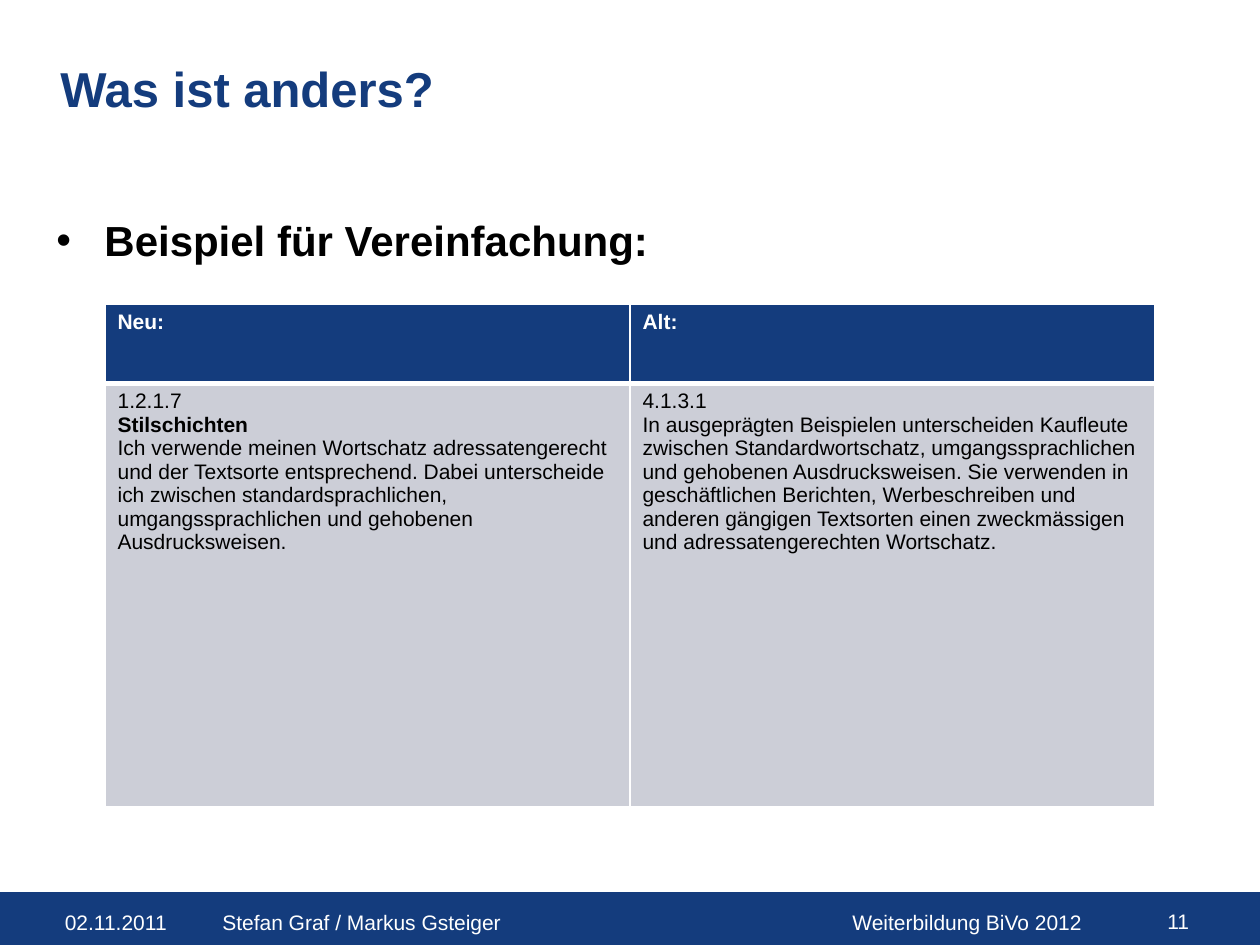
from dataclasses import dataclass

from lxml import etree
from pptx import Presentation
from pptx.dml.color import RGBColor
from pptx.enum.shapes import MSO_SHAPE
from pptx.enum.text import MSO_ANCHOR, PP_ALIGN
from pptx.oxml.ns import qn
from pptx.util import Pt

RECT = MSO_SHAPE.RECTANGLE
TOP = MSO_ANCHOR.TOP
LEFT, RIGHT = PP_ALIGN.LEFT, PP_ALIGN.RIGHT


@dataclass(frozen=True)
class Theme:
    font: str = "Arial"
    navy: str = "143C7D"
    gray: str = "CCCED7"
    white: str = "FFFFFF"
    black: str = "000000"
    small: float = 12
    large: float = 24
    title: float = 28
    thin: float = 1
    thick: float = 3


@dataclass(frozen=True)
class Label:
    text: str
    left: float
    top: float
    width: float
    height: float
    size: float
    color: str
    bold: bool = False
    align: PP_ALIGN = LEFT
    inset: float = 3.6
    indent: float = 0


@dataclass(frozen=True)
class Line:
    text: str
    bold: bool = False


THEME = Theme()
BAR_TOP = 510

TITLE = Label("Was ist anders?", 27.4, 27.4, 525.6, 67,
              THEME.title, THEME.navy, bold=True, inset=6)
POINT = Label("Beispiel für Vereinfachung:", 25.2, 116.6, 656, 363,
              THEME.large, THEME.black, bold=True, inset=6, indent=27.4)


def foot(text: str, left: float, width: float, top: float = 516.2,
         align: PP_ALIGN = LEFT) -> Label:
    return Label(text, left, top, width, 23, THEME.small, THEME.white,
                 align=align)


FEET = [
    foot("02.11.2011", 30, 78),
    foot("Weiterbildung BiVo 2012", 480, 168),
    foot("11", 648, 38.6, top=515.5, align=RIGHT),
    foot("Stefan Graf / Markus Gsteiger", 120, 297),
]

HEADS = [[Line("Neu:", True)], [Line("Alt:", True)]]
TEXTS = [
    [
        Line("1.2.1.7"),
        Line("Stilschichten", True),
        Line("Ich verwende meinen Wortschatz adressatengerecht und der "
             "Textsorte entsprechend. Dabei unterscheide ich zwischen "
             "standardsprachlichen, umgangssprachlichen und gehobenen "
             "Ausdrucksweisen."),
    ],
    [
        Line("4.1.3.1"),
        Line("In ausgeprägten Beispielen unterscheiden Kaufleute zwischen "
             "Standardwortschatz, umgangssprachlichen und gehobenen "
             "Ausdrucksweisen. Sie verwenden in geschäftlichen Berichten, "
             "Werbeschreiben und anderen gängigen Textsorten einen "
             "zweckmässigen und adressatengerechten Wortschatz."),
    ],
]


def add_run(para, text: str, size: float, color: str, bold: bool) -> None:
    run = para.add_run()
    run.text = text
    run.font.name = THEME.font
    run.font.size = Pt(size)
    run.font.bold = bold
    run.font.color.rgb = RGBColor.from_string(color)


def add_bullet(para, indent: float) -> None:
    props = para._p.get_or_add_pPr()
    props.set("marL", str(Pt(indent)))
    props.set("indent", str(-Pt(indent)))
    etree.SubElement(props, qn("a:buFont")).set("typeface", THEME.font)
    etree.SubElement(props, qn("a:buChar")).set("char", "•")


def add_label(slide, label: Label) -> None:
    box = slide.shapes.add_textbox(Pt(label.left), Pt(label.top),
                                   Pt(label.width), Pt(label.height))
    frame = box.text_frame
    frame.word_wrap = True
    frame.vertical_anchor = TOP
    frame.margin_top = Pt(label.inset)
    para = frame.paragraphs[0]
    para.alignment = label.align
    if label.indent:
        add_bullet(para, label.indent)
    add_run(para, label.text, label.size, label.color, label.bold)


def add_edge(cell, side: str, width: float) -> None:
    props = cell._tc.get_or_add_tcPr()
    edge = etree.SubElement(props, qn(f"a:ln{side}"), w=str(Pt(width)))
    fill = etree.SubElement(edge, qn("a:solidFill"))
    etree.SubElement(fill, qn("a:srgbClr")).set("val", THEME.white)


def fill_cell(cell, lines: list[Line], back: str, color: str,
              edges: dict[str, float]) -> None:
    for side in "LRTB":
        add_edge(cell, side, edges.get(side, THEME.thin))
    cell.fill.solid()
    cell.fill.fore_color.rgb = RGBColor.from_string(back)
    cell.vertical_anchor = TOP
    frame = cell.text_frame
    for i, line in enumerate(lines):
        para = frame.add_paragraph() if i else frame.paragraphs[0]
        add_run(para, line.text, THEME.small, color, line.bold)


def add_grid(slide) -> None:
    shape = slide.shapes.add_table(2, 2, Pt(60), Pt(174), Pt(600), Pt(287))
    table = shape.table
    table.horz_banding = False
    for col in table.columns:
        col.width = Pt(300)
    for row, height in zip(table.rows, (45, 242)):
        row.height = Pt(height)
    for col, (head, text) in enumerate(zip(HEADS, TEXTS)):
        fill_cell(table.cell(0, col), head, THEME.navy, THEME.white,
                  {"B": THEME.thick})
        fill_cell(table.cell(1, col), text, THEME.gray, THEME.black,
                  {"T": THEME.thick})


def add_bar(slide) -> None:
    bar = slide.shapes.add_shape(RECT, Pt(-3), Pt(BAR_TOP), Pt(723),
                                 Pt(540 - BAR_TOP))
    bar.shadow.inherit = False
    navy = RGBColor.from_string(THEME.navy)
    bar.fill.solid()
    bar.fill.fore_color.rgb = navy
    bar.line.color.rgb = navy
    bar.line.width = Pt(0.75)


def main() -> None:
    deck = Presentation()
    deck.slide_width, deck.slide_height = Pt(720), Pt(540)
    slide = deck.slides.add_slide(deck.slide_layouts[6])

    # Footer band, then title and bullet
    add_bar(slide)
    for label in [*FEET, TITLE, POINT]:
        add_label(slide, label)

    # New and old wording side by side
    add_grid(slide)
    deck.save("out.pptx")


if __name__ == "__main__":
    main()
